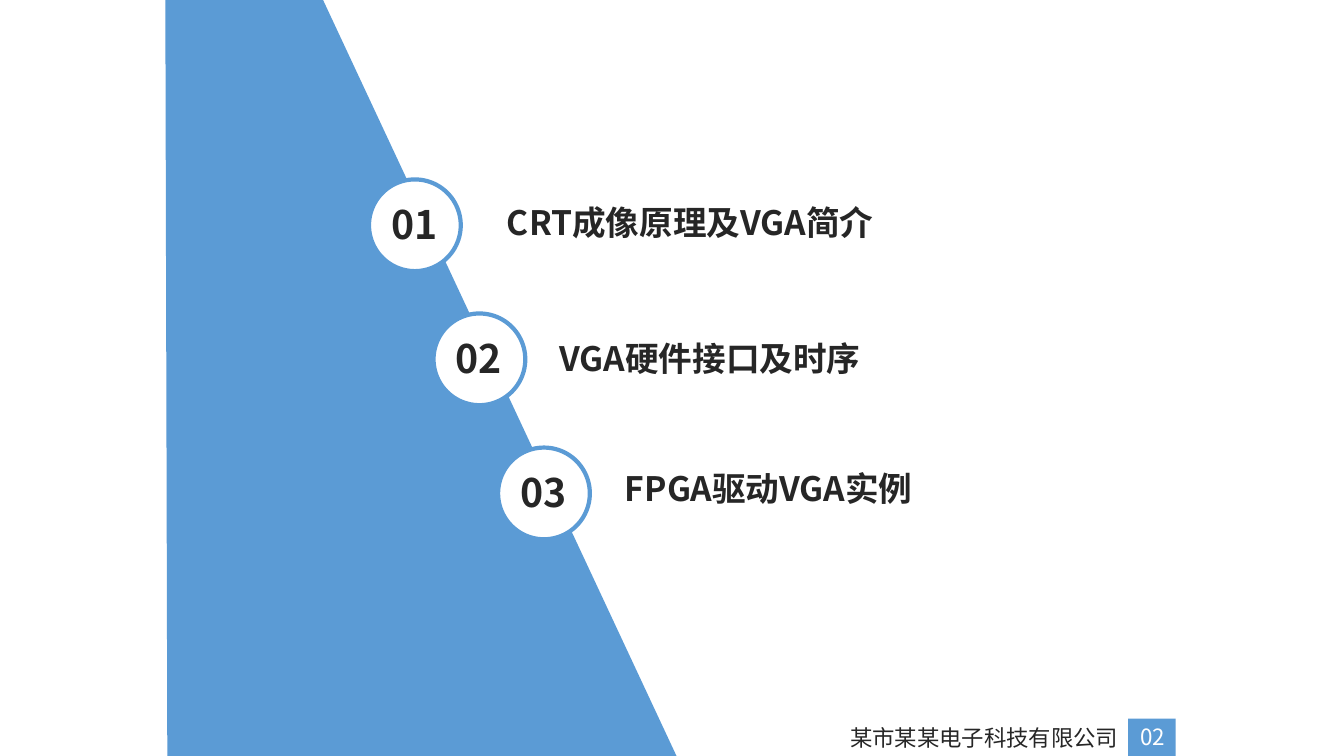
from lxml.etree import SubElement
from pptx import Presentation
from pptx.dml.color import RGBColor
from pptx.enum.shapes import MSO_SHAPE as Preset
from pptx.enum.text import MSO_AUTO_SIZE as AutoSize, PP_ALIGN as Align
from pptx.oxml.ns import qn
from pptx.util import Pt

PX = 9144  # EMU per px, 100 px to the inch
SLIDE_WIDTH, SLIDE_HEIGHT = 1333, 750

BLUE = RGBColor(0x5B, 0x9B, 0xD5)
WHITE = RGBColor(0xFF, 0xFF, 0xFF)
DARK = RGBColor(0x26, 0x26, 0x26)
FONT = "Noto Sans CJK SC"

NUMBER = {"size": Pt(28), "bold": True}
TOPIC = {"size": Pt(24), "bold": True}
FOOTER = {"size": Pt(16)}

# Topic, then left, top and width of its text
TOPICS = [
    ("CRT成像原理及VGA简介", 493, 195, 611),
    ("VGA硬件接口及时序", 545, 330, 575),
    ("FPGA驱动VGA实例", 610, 459, 547),
]
CIRCLE_LEFT, CIRCLE_TOP, CIRCLE_SIZE = 366, 178, 91
STEP_X, STEP_Y = 64, 133


def px(*lengths):
    return [length * PX for length in lengths]


def paint(shape, fill, line=None):
    shape.shadow.inherit = False
    shape.fill.solid()
    shape.fill.fore_color.rgb = fill
    if line is None:
        shape.line.fill.background()
    else:
        shape.line.color.rgb = line
        shape.line.width = Pt(3)


def add_shape(shapes, preset, box, fill, line=None):
    paint(shapes.add_shape(preset, *px(*box)), fill, line)


def add_text(shapes, text, box, style, align=Align.LEFT, color=DARK):
    frame = shapes.add_textbox(*px(*box)).text_frame
    frame.word_wrap = True
    frame.auto_size = AutoSize.SHAPE_TO_FIT_TEXT
    paragraph = frame.paragraphs[0]
    paragraph.alignment = align
    run = paragraph.add_run()
    run.text = text
    run.font.color.rgb = color
    for name, value in {"name": FONT, **style}.items():
        setattr(run.font, name, value)
    # Chinese characters take their font from a:ea
    SubElement(run.font._element, qn("a:ea"), typeface=FONT)


def add_panel(shapes):
    builder = shapes.build_freeform(671, 750, scale=PX)
    builder.add_line_segments([(320, -1), (164, -1), (166, 754)], close=True)
    paint(builder.convert_to_shape(), BLUE)


def add_number(shapes, index):
    left = CIRCLE_LEFT + index * STEP_X
    top = CIRCLE_TOP + index * STEP_Y
    group = shapes.add_group_shape().shapes
    add_shape(group, Preset.OVAL, (left, top, CIRCLE_SIZE, CIRCLE_SIZE), WHITE, BLUE)
    add_text(group, f"{index + 1:02}", (left + 8, top + 16, 74, 60), NUMBER, Align.CENTER)


def add_footer(shapes):
    group = shapes.add_group_shape().shapes
    add_shape(group, Preset.RECTANGLE, (1119, 713, 47, 37), BLUE)
    add_text(group, "02", (1108, 713, 70, 37), FOOTER, Align.CENTER, WHITE)
    add_text(group, "某市某某电子科技有限公司", (300, 713, 819, 39), FOOTER, Align.RIGHT)


def main():
    presentation = Presentation()
    presentation.slide_width, presentation.slide_height = px(SLIDE_WIDTH, SLIDE_HEIGHT)
    slide = presentation.slides.add_slide(presentation.slide_layouts[6])
    shapes = slide.shapes

    # Slanted panel on the left
    add_panel(shapes)

    # Numbered topics along the slant
    for index, (topic, left, top, width) in enumerate(TOPICS):
        add_number(shapes, index)
        add_text(shapes, topic, (left, top, width, 50), TOPIC)

    # Company and page number
    add_footer(shapes)

    presentation.save("out.pptx")


if __name__ == "__main__":
    main()
